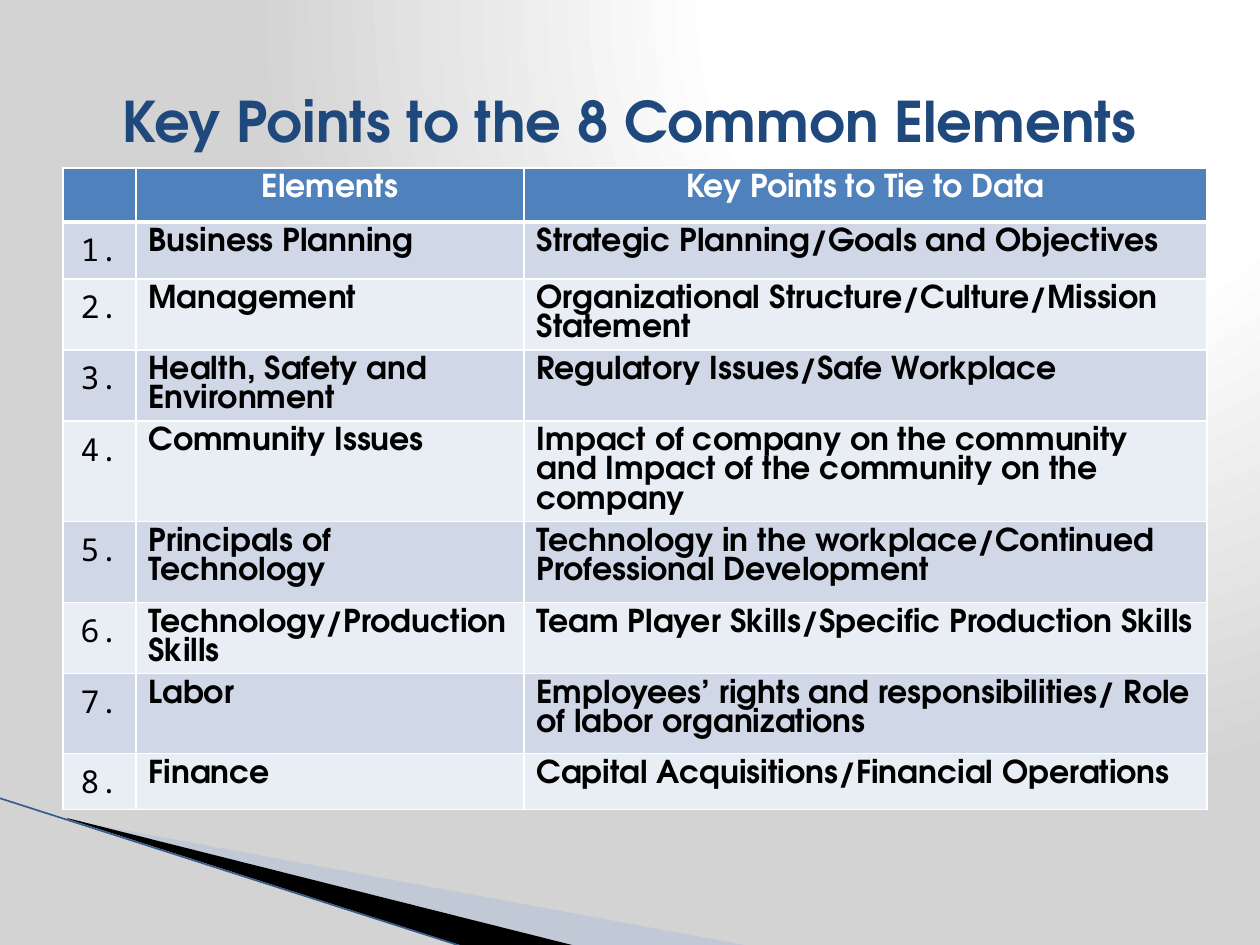
from lxml import etree
from pptx import Presentation
from pptx.dml.color import RGBColor
from pptx.enum.shapes import MSO_CONNECTOR
from pptx.enum.text import MSO_ANCHOR, PP_ALIGN
from pptx.oxml import parse_xml
from pptx.oxml.ns import nsdecls, qn
from pptx.util import Pt

PX = 914400 / 126
CENTER, LEFT = PP_ALIGN.CENTER, PP_ALIGN.LEFT
MIDDLE = MSO_ANCHOR.MIDDLE
STRAIGHT = MSO_CONNECTOR.STRAIGHT

WHITE = RGBColor(0xFF, 0xFF, 0xFF)
BLACK = RGBColor(0x00, 0x00, 0x00)
GRAY = RGBColor(0xD3, 0xD3, 0xD3)
NAVY = RGBColor(0x1F, 0x49, 0x7D)
HEADER_BLUE = RGBColor(0x4F, 0x81, 0xBD)
BAND_DARK = RGBColor(0xD0, 0xD8, 0xE8)
BAND_LIGHT = RGBColor(0xE9, 0xED, 0xF4)
WEDGE_BLUE = RGBColor(0xA7, 0xB9, 0xDB)
EDGE_BLUE = RGBColor(0x38, 0x5D, 0x8A)

HEADING_FONT = "TeX Gyre Adventor"
NUMBER_FONT = "Noto Sans Mono"


def px(value):
    return round(value * PX)


def write_text(text_frame, text, alignment, font_values):
    paragraph = text_frame.paragraphs[0]
    paragraph.alignment = alignment
    run = paragraph.add_run()
    run.text = text
    for name, value in font_values.items():
        if name == "color":
            run.font.color.rgb = value
        else:
            setattr(run.font, name, value)


presentation = Presentation()
presentation.slide_width, presentation.slide_height = px(1260), px(945)
slide = presentation.slides.add_slide(presentation.slide_layouts[5])

# Background: white glow at the top right, fading to gray
slide.background.fill.solid()
background = slide.background.fill._xPr
background.replace(background.find(qn("a:solidFill")), parse_xml(
    f'<a:gradFill {nsdecls("a")} rotWithShape="1"><a:gsLst>'
    + "".join(f'<a:gs pos="{position}"><a:srgbClr val="{color}"/></a:gs>'
              for position, color in ((0, WHITE), (40000, WHITE), (100000, GRAY)))
    + '</a:gsLst><a:path path="circle"><a:fillToRect l="65000" t="0" r="0" b="98000"/>'
    '</a:path></a:gradFill>'))

# Wedges in the bottom corner: points, colour, opacity in percent
wedges = [
    ([(69, 820), (750, 946), (575, 946), (69, 819)], WEDGE_BLUE, 40),
    ([(67, 818), (576, 946), (469, 948), (68, 819)], BLACK, 100),
]
for points, color, opacity in wedges:
    builder = slide.shapes.build_freeform(*points[0], scale=PX)
    builder.add_line_segments(points[1:], close=True)
    wedge = builder.convert_to_shape()
    wedge.shadow.inherit = False
    wedge.line.fill.background()
    wedge.fill.solid()
    wedge.fill.fore_color.rgb = color
    if opacity < 100:
        color_element = wedge._element.spPr.find(".//" + qn("a:srgbClr"))
        etree.SubElement(color_element, qn("a:alpha"), val=str(opacity * 1000))

edge = slide.shapes.add_connector(STRAIGHT, px(-1), px(798), px(467), px(948))
edge.line.color.rgb = EDGE_BLUE
edge.line.width = Pt(0.95)
etree.SubElement(edge._element.spPr, qn("a:effectLst"))

# Table of elements and key points
entries = [
    ("Business Planning", "Strategic Planning/Goals and Objectives"),
    ("Management", "Organizational Structure/Culture/Mission Statement"),
    ("Health, Safety and Environment", "Regulatory Issues/Safe Workplace"),
    ("Community Issues",
     "Impact of company on the community and Impact of the community on the company"),
    ("Principals of Technology",
     "Technology in the workplace/Continued Professional Development"),
    ("Technology/Production Skills", "Team Player Skills/Specific Production Skills"),
    ("Labor", "Employees’ rights and responsibilities/ Role of labor organizations"),
    ("Finance", "Capital Acquisitions/Financial Operations"),
]
rows = [("", "Elements", "Key Points to Tie to Data")]
rows += [(f"{number}.", *entry) for number, entry in enumerate(entries, 1)]
column_widths = [73, 388, 683]
row_heights = [54, 57, 71, 71, 100, 81, 71, 80, 56]

table = slide.shapes.add_table(
    len(rows), len(column_widths), px(63), px(168),
    px(sum(column_widths)), px(sum(row_heights))).table
for column, width in zip(table.columns, column_widths):
    column.width = px(width)
for row, height in zip(table.rows, row_heights):
    row.height = px(height)

for row_index, texts in enumerate(rows):
    is_header = row_index == 0
    fill_color = HEADER_BLUE if is_header else (BAND_LIGHT, BAND_DARK)[row_index % 2]
    border_widths = {"L": 1, "R": 1, "T": 3 if row_index == 1 else 1,
                     "B": 3 if is_header else 1}
    for column_index, text in enumerate(texts):
        cell = table.cell(row_index, column_index)
        properties = cell._tc.get_or_add_tcPr()
        for side, width in border_widths.items():
            properties.append(parse_xml(
                f'<a:ln{side} {nsdecls("a")} w="{Pt(width)}"><a:solidFill>'
                f'<a:srgbClr val="{WHITE}"/></a:solidFill></a:ln{side}>'))
        cell.fill.solid()
        cell.fill.fore_color.rgb = fill_color
        if text:
            is_number = column_index == 0
            write_text(cell.text_frame, text, CENTER if is_header or is_number else LEFT, {
                "size": Pt(18),
                "name": NUMBER_FONT if is_number else HEADING_FONT,
                "bold": not is_number,
                "color": WHITE if is_header else BLACK,
            })

title = slide.shapes.title
title.left, title.top, title.width, title.height = px(63), px(42), px(1134), px(157)
title.text_frame.vertical_anchor = MIDDLE
write_text(title.text_frame, "Key Points to the 8 Common Elements", CENTER, {
    "size": Pt(32), "name": HEADING_FONT, "bold": True, "color": NAVY})

presentation.save("out.pptx")
